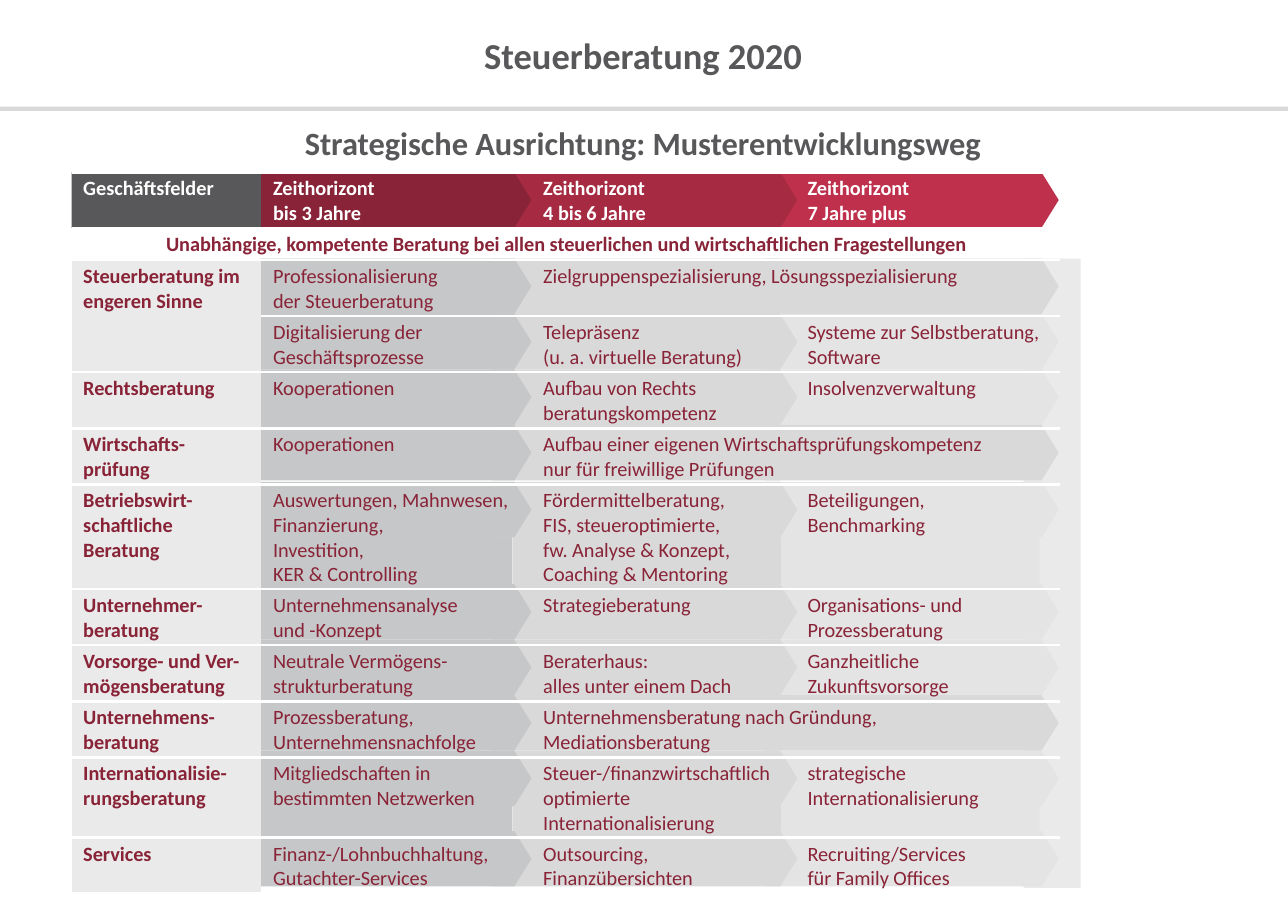
from dataclasses import dataclass

from lxml import etree
from pptx import Presentation
from pptx import util as u
from pptx.dml.color import RGBColor
from pptx.enum import shapes, text
from pptx.oxml import ns


@dataclass(frozen=True)
class Theme:
    font: str = "Calibri"
    title: float = 18
    subtitle: float = 16
    body: float = 10
    border: float = 1.5
    white: str = "FFFFFF"
    dark: str = "58585A"
    red: str = "892337"
    headers: tuple[str, ...] = ("892337", "A62A42", "BE304B")
    phases: tuple[str, ...] = ("C6C7C8", "D9D9D9", "E4E4E4")
    label: str = "EAEAEA"
    rule: str = "D9D9D9"


@dataclass(frozen=True)
class Field:
    """One row: an empty label continues the field above; two cells mean phases 2 and 3 are joined."""
    top: float
    label: str
    cells: tuple[str, ...]
    filler: float = 0  # height of the grey blocks below the arrows

    @property
    def joined(self) -> bool:
        return len(self.cells) == 2


T = Theme()
LEFT, TOP = 0.49, 1.18
ARROW_H = 0.38
COLS = (1.3, 1.85, 1.81, 1.81)
ARROWS = ((1.78, 1.86), (3.37, 2.09), (5.24, 2.01))
FILLERS = ((1.78, 1.73), (3.51, 1.85), (5.35, 1.77))
HEADERS = ("Geschäftsfelder", "Zeithorizont\nbis 3 Jahre",
           "Zeithorizont\n4 bis 6 Jahre", "Zeithorizont\n7 Jahre plus")
CLAIM = "Unabhängige, kompetente Beratung bei allen steuerlichen und wirtschaftlichen Fragestellungen"
FIELDS = (
    Field(1.77, "Steuerberatung im engeren Sinne",
          ("Professionalisierung\nder Steuerberatung",
           "Zielgruppenspezialisierung, Lösungsspezialisierung")),
    Field(2.15, "",
          ("Digitalisierung der\nGeschäftsprozesse",
           "Telepräsenz\n(u. a. virtuelle Beratung)",
           "Systeme zur Selbstberatung,\nSoftware")),
    Field(2.53, "Rechtsberatung",
          ("Kooperationen", "Aufbau von Rechts\nberatungskompetenz", "Insolvenzverwaltung")),
    Field(2.91, "Wirtschafts-prüfung",
          ("Kooperationen",
           "Aufbau einer eigenen Wirtschaftsprüfungskompetenz\nnur für freiwillige Prüfungen")),
    Field(3.3, "Betriebswirt-schaftliche\nBeratung",
          ("Auswertungen, Mahnwesen,\nFinanzierung,\nInvestition,\nKER & Controlling",
           "Fördermittelberatung,\nFIS, steueroptimierte,\nfw. Analyse & Konzept,\nCoaching & Mentoring",
           "Beteiligungen,\nBenchmarking"), filler=0.35),
    Field(4.0, "Unternehmer-beratung",
          ("Unternehmensanalyse\nund -Konzept", "Strategieberatung",
           "Organisations- und Prozessberatung")),
    Field(4.38, "Vorsorge- und Ver-mögensberatung",
          ("Neutrale Vermögens-strukturberatung",
           "Beraterhaus:\nalles unter einem Dach",
           "Ganzheitliche\nZukunftsvorsorge")),
    Field(4.76, "Unternehmens-beratung",
          ("Prozessberatung,\nUnternehmensnachfolge",
           "Unternehmensberatung nach Gründung,\nMediationsberatung")),
    Field(5.14, "Internationalisie-rungsberatung",
          ("Mitgliedschaften in\nbestimmten Netzwerken",
           "Steuer-/finanzwirtschaftlich optimierte\nInternationalisierung",
           "strategische\nInternationalisierung"), filler=0.2),
    Field(5.69, "Services",
          ("Finanz-/Lohnbuchhaltung, Gutachter-Services",
           "Outsourcing,\nFinanzübersichten",
           "Recruiting/Services\nfür Family Offices")),
)


def write(tf, content: str, *, size: float = T.body, color: str = T.red,
          bold: bool = False, align=text.PP_ALIGN.LEFT) -> None:
    for i, line in enumerate(content.split("\n")):
        p = tf.add_paragraph() if i else tf.paragraphs[0]
        p.alignment = align
        r = p.add_run()
        r.text = line
        r.font.name, r.font.size, r.font.bold = T.font, u.Pt(size), bold
        r.font.color.rgb = RGBColor.from_string(color)


def add_heading(s, content: str, top: float, height: float, size: float) -> None:
    tf = s.shapes.add_textbox(*map(u.Inches, (0.47, top, 7.87, height))).text_frame
    tf.word_wrap = True
    tf.vertical_anchor = text.MSO_ANCHOR.MIDDLE
    write(tf, content, size=size, color=T.dark, bold=True, align=text.PP_ALIGN.CENTER)


def add_block(s, left: float, top: float, width: float, height: float, color: str,
              kind=shapes.MSO_SHAPE.RECTANGLE):
    sp = s.shapes.add_shape(kind, *map(u.Inches, (left, top, width, height)))
    sp.shadow.inherit = False
    sp.fill.solid()
    sp.fill.fore_color.rgb = RGBColor.from_string(color)
    sp.line.fill.background()
    return sp


def add_arrow(s, left: float, top: float, width: float, color: str) -> None:
    sp = add_block(s, left, top, width, ARROW_H, color, shapes.MSO_SHAPE.PENTAGON)
    sp.adjustments[0] = 0.31


def add_arrow_row(s, top: float, colors: tuple[str, ...]) -> None:
    """Draw from right to left, so that each tip overlaps the next phase."""
    for (left, width), color in reversed(list(zip(ARROWS, colors))):
        add_arrow(s, left, top, width, color)


def set_borders(cell) -> None:
    """White lines above and below, none at the sides."""
    tc_pr = cell._tc.get_or_add_tcPr()
    for i, side in enumerate(("lnL", "lnR", "lnT", "lnB")):
        ln = etree.Element(ns.qn(f"a:{side}"), w=str(u.Pt(T.border)))
        if side in ("lnL", "lnR"):
            etree.SubElement(ln, ns.qn("a:noFill"))
        else:
            fill = etree.SubElement(ln, ns.qn("a:solidFill"))
            etree.SubElement(fill, ns.qn("a:srgbClr"), val=T.white)
        tc_pr.insert(i, ln)


def style_cell(cell, fill: str = "") -> None:
    cell.margin_left = cell.margin_right = u.Inches(0.08)
    cell.margin_top, cell.margin_bottom = u.Inches(0.03), u.Inches(0.02)
    if fill:
        cell.fill.solid()
        cell.fill.fore_color.rgb = RGBColor.from_string(fill)
    else:
        cell.fill.background()
    set_borders(cell)


def add_fields_table(s) -> None:
    heights = [0.35] + [0.2] * (len(FIELDS) + 1)
    box = map(u.Inches, (LEFT, TOP, sum(COLS), sum(heights)))
    tbl = s.shapes.add_table(len(heights), len(COLS), *box).table
    tbl.first_row = tbl.horz_banding = False
    for col, width in zip(tbl.columns, COLS):
        col.width = u.Inches(width)
    for i, height in enumerate(heights):
        tbl.rows[i].height = u.Inches(height)
        for j in range(len(COLS)):
            label_fill = {0: T.dark, 1: ""}.get(i, T.label)
            style_cell(tbl.cell(i, j), "" if j else label_fill)

    for j, header in enumerate(HEADERS):
        write(tbl.cell(0, j).text_frame, header, color=T.white, bold=True)
    claim = tbl.cell(1, 0)
    claim.merge(tbl.cell(1, 3))
    claim.vertical_anchor = text.MSO_ANCHOR.MIDDLE
    write(claim.text_frame, CLAIM, bold=True, align=text.PP_ALIGN.CENTER)

    for i, field in enumerate(FIELDS, 2):
        if field.label:
            write(tbl.cell(i, 0).text_frame, field.label, bold=True)
        else:
            tbl.cell(i - 1, 0).merge(tbl.cell(i, 0))
        if field.joined:
            tbl.cell(i, 2).merge(tbl.cell(i, 3))
        for j, content in enumerate(field.cells, 1):
            write(tbl.cell(i, j).text_frame, content)


def main() -> None:
    prs = Presentation()
    prs.slide_width, prs.slide_height = u.Inches(8.82), u.Inches(6.32)
    s = prs.slides.add_slide(prs.slide_layouts[6])

    add_block(s, 0, 0.73, 8.82, 0.03, T.rule)
    add_heading(s, "Steuerberatung 2020", 0.15, 0.45, T.title)
    add_heading(s, "Strategische Ausrichtung: Musterentwicklungsweg", 0.78, 0.39, T.subtitle)
    add_block(s, 7.01, 1.77, 0.39, 4.31, T.label)

    add_arrow_row(s, TOP, T.headers)
    add_arrow(s, LEFT, TOP, COLS[0], T.dark)
    for field in FIELDS:
        if field.filler:
            for (left, width), color in zip(FILLERS, T.phases):
                add_block(s, left, field.top + ARROW_H - 0.01, width, field.filler, color)
    for field in FIELDS:
        first, second, third = T.phases
        add_arrow_row(s, field.top, (first, second, second if field.joined else third))
    add_fields_table(s)
    prs.save("out.pptx")


if __name__ == "__main__":
    main()
